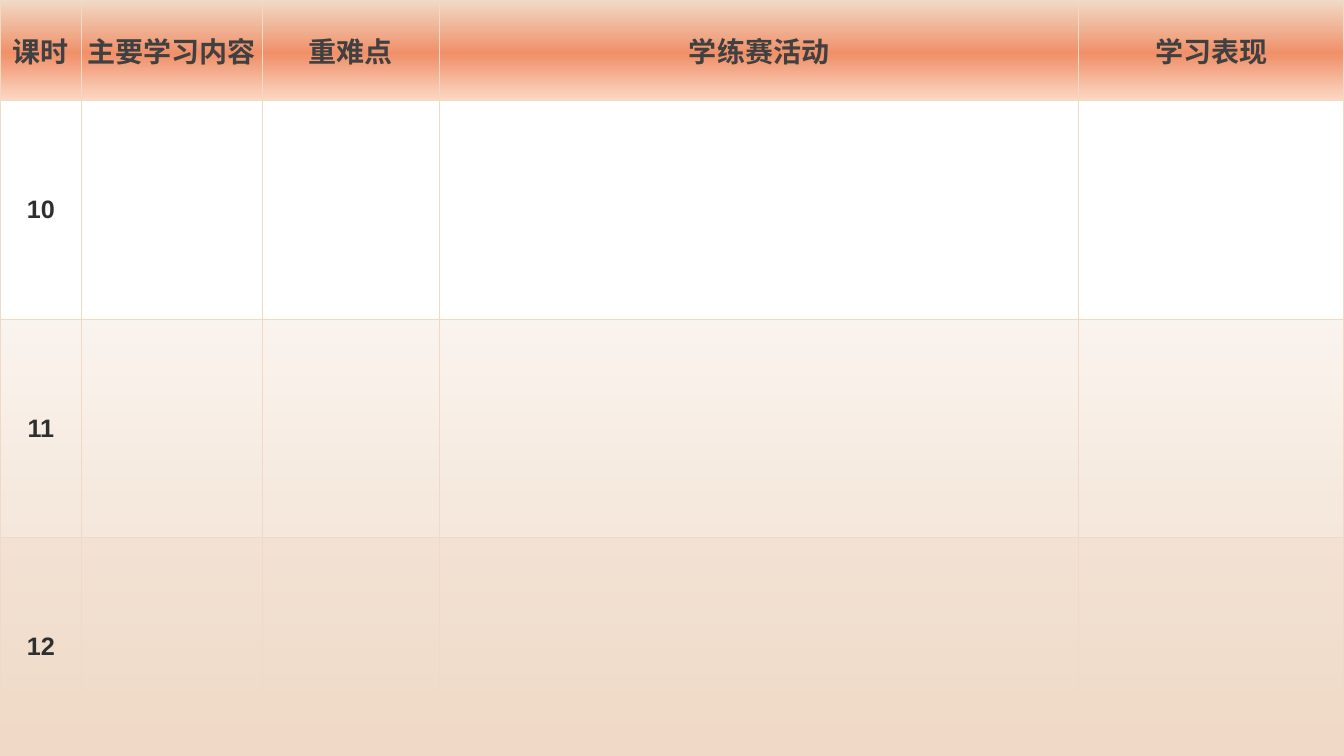
from copy import deepcopy

from pptx import Presentation
from pptx.dml.color import RGBColor
from pptx.enum.text import MSO_ANCHOR, PP_ALIGN
from pptx.oxml.ns import qn
from pptx.util import Inches, Pt
from lxml.etree import SubElement, Element

SAND = "F0DAC7"
HEADINGS = ["课时", "主要学习内容", "重难点", "学练赛活动", "学习表现"]
COLUMN_WIDTHS = [0.81, 1.79, 1.76, 6.34, 2.63]
HEADER_HEIGHT = 1
LESSON_HEIGHT = 6.5 / 3
# Lesson number and the opacity of its row, in percent
LESSONS = [("10", 0), ("11", 25), ("12", 50)]
HEADER_STOPS = [(0, SAND), (0.53, "F09069"), (1, "FCD9C5")]
BACKGROUND_STOPS = [(0, SAND), (0.61, "FFFFFF")]


def color(value):
    return RGBColor.from_string(value)


def fill_gradient(fill, owner, stops, angle):
    """Fill with (position, colour) stops; angle runs counter-clockwise."""
    fill.gradient()
    fill.gradient_angle = angle
    stop_list = owner.find(".//" + qn("a:gsLst"))
    while len(stop_list) < len(stops):
        stop_list.append(deepcopy(stop_list[0]))
    for gradient_stop, (position, value) in zip(fill.gradient_stops, stops):
        gradient_stop.position = position
        gradient_stop.color.rgb = color(value)


def fill_tint(cell, opacity):
    if not opacity:
        cell.fill.background()
        return
    cell.fill.solid()
    cell.fill.fore_color.rgb = color(SAND)
    rgb = cell._tc.tcPr.find(".//" + qn("a:srgbClr"))
    SubElement(rgb, qn("a:alpha"), val=str(opacity * 1000))


def add_borders(cell):
    """Put the four border lines ahead of the cell's fill."""
    properties = cell._tc.get_or_add_tcPr()
    for index, side in enumerate(["a:lnL", "a:lnR", "a:lnT", "a:lnB"]):
        line = Element(qn(side), w=str(Pt(1)))
        solid = SubElement(line, qn("a:solidFill"))
        SubElement(solid, qn("a:srgbClr"), val=SAND)
        properties.insert(index, line)


def write_cell(cell, text, size, value, inset):
    cell.vertical_anchor = MSO_ANCHOR.MIDDLE
    cell.margin_left = cell.margin_right = Inches(inset)
    cell.margin_top = cell.margin_bottom = Inches(inset)
    paragraph = cell.text_frame.paragraphs[0]
    paragraph.alignment = PP_ALIGN.CENTER
    run = paragraph.add_run()
    run.text = text
    run.font.name = "Arial"
    run.font.size = Pt(size)
    run.font.bold = True
    run.font.color.rgb = color(value)


def add_lesson_table(slide, width, height):
    shape = slide.shapes.add_table(
        len(LESSONS) + 1, len(HEADINGS), 0, 0, width, height)
    table = shape.table
    table.first_row = table.horz_banding = False
    for column, column_width in zip(table.columns, COLUMN_WIDTHS):
        column.width = Inches(column_width)
    for index, row in enumerate(table.rows):
        row.height = Inches(LESSON_HEIGHT if index else HEADER_HEIGHT)

    for cell, heading in zip(table.rows[0].cells, HEADINGS):
        write_cell(cell, heading, 20, "404040", 0.04)
        fill_gradient(cell.fill, cell._tc, HEADER_STOPS, 270)
    for index, (number, opacity) in enumerate(LESSONS, start=1):
        write_cell(table.cell(index, 0), number, 18, "2F2F2F", 0.1)
        for cell in table.rows[index].cells:
            fill_tint(cell, opacity)
    for cell in table.iter_cells():
        add_borders(cell)


def main():
    presentation = Presentation()
    presentation.slide_width = Inches(13.33)
    presentation.slide_height = Inches(7.5)
    slide = presentation.slides.add_slide(presentation.slide_layouts[6])
    fill_gradient(slide.background.fill, slide.element, BACKGROUND_STOPS, 90)
    add_lesson_table(slide, presentation.slide_width, presentation.slide_height)
    presentation.save("out.pptx")


if __name__ == "__main__":
    main()
